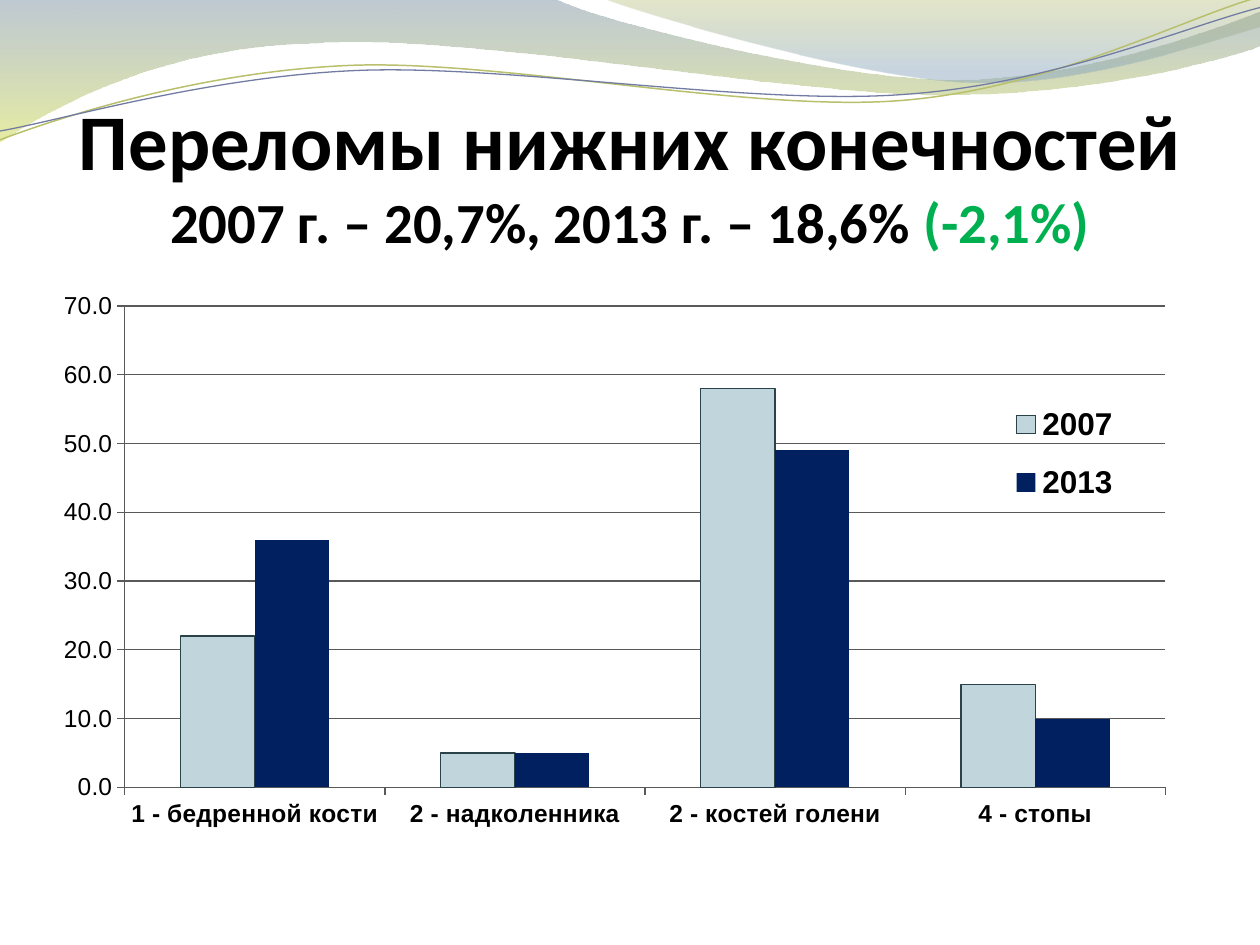
from lxml.etree import SubElement
from pptx import Presentation
from pptx.chart.data import CategoryChartData
from pptx.dml.color import RGBColor
from pptx.enum.chart import XL_CHART_TYPE as ChartType, XL_LEGEND_POSITION as LegendPosition, XL_TICK_MARK as TickMark
from pptx.enum.text import MSO_ANCHOR as Anchor, MSO_AUTO_SIZE as AutoSize, PP_ALIGN as Align
from pptx.oxml import parse_xml
from pptx.oxml.ns import nsdecls, qn
from pptx.util import Inches, Pt

CHART_WIDTH, CHART_HEIGHT = 9.21, 4.65


def color(value):
    return RGBColor.from_string(value)


def manual_layout(left, top, width, height, inner=False):
    layout = parse_xml(f"<c:layout {nsdecls('c')}><c:manualLayout/></c:layout>")
    settings = [("layoutTarget", "inner")] if inner else []
    settings += [("xMode", "edge"), ("yMode", "edge"),
                 ("x", left / CHART_WIDTH), ("y", top / CHART_HEIGHT),
                 ("w", width / CHART_WIDTH), ("h", height / CHART_HEIGHT)]
    for name, value in settings:
        SubElement(layout[0], qn(f"c:{name}")).set("val", str(value))
    return layout


deck = Presentation()
deck.slide_width, deck.slide_height = Inches(10), Inches(7.5)
slide = deck.slides.add_slide(deck.slide_layouts[5])

waves = [
    ((0, 0),
     [[(4.4, -0.01)],
      [(4.76, 0.17), (6.64, 0.63), (7.58, 0.63)],
      [(8.53, 0.63), (9.58, 0.26), (10, 0.09)],
      [(10.01, 0.36)],
      [(9.83, 0.44), (8.7, 0.76), (7.46, 0.75)],
      [(6.22, 0.75), (3.82, 0.28), (2.57, 0.34)],
      [(1.29, 0.36), (0.46, 0.83), (-0.01, 1.13)]],
     [(0, "72889B", 45), (1, "D3DE57", 55)], None),
    ((4.79, -0.01),
     [[(5.09, 0.11), (6.82, 0.62), (7.69, 0.65)],
      [(8.56, 0.69), (9.61, 0.32), (10, 0.21)],
      [(10, 0)]],
     [(0, "A4AC50", 30), (0.8, "84A3BD", 45)], None),
    ((0, 1.11),
     [[(0.48, 0.93), (1.58, 0.57), (2.77, 0.52)],
      [(3.95, 0.47), (5.93, 0.89), (7.13, 0.8)],
      [(8.33, 0.71), (9.38, 0.15), (9.98, -0.02)]],
     None, ("B9C06C", 0.85)),
    ((0, 1.04),
     [[(0.47, 0.96), (1.64, 0.61), (2.83, 0.56)],
      [(4.03, 0.51), (5.97, 0.84), (7.17, 0.75)],
      [(8.36, 0.67), (9.41, 0.21), (10, 0.06)]],
     None, ("727CA3", 0.75)),
]
for start, steps, gradient, outline in waves:
    builder = slide.shapes.build_freeform(Inches(start[0]), Inches(start[1]))
    builder.add_line_segments([(Inches(x), Inches(y)) for step in steps for x, y in step],
                              close=gradient is not None)
    wave = builder.convert_to_shape()
    wave.shadow.inherit = False
    segments = iter(list(wave._element.spPr.iter(qn("a:lnTo"))))
    for step in steps:
        step_segments = [next(segments) for point in step]
        if len(step) == 3:
            curve = parse_xml(f"<a:cubicBezTo {nsdecls('a')}/>")
            step_segments[0].addprevious(curve)
            for segment in step_segments:
                curve.append(segment[0])
                segment.getparent().remove(segment)
    if gradient:
        wave.line.fill.background()
        wave.fill.gradient()
        wave.fill.gradient_angle = 270
        for stop, (position, value, opacity) in zip(wave.fill.gradient_stops, gradient):
            stop.position = position
            stop.color.rgb = color(value)
        for element, (position, value, opacity) in zip(wave._element.spPr.iter(qn("a:srgbClr")), gradient):
            SubElement(element, qn("a:alpha")).set("val", str(opacity * 1000))
    else:
        wave.fill.background()
        wave.line.color.rgb = color(outline[0])
        wave.line.width = Pt(outline[1])

title = slide.shapes.title
slide.shapes._spTree.append(title._element)
title.left, title.top, title.width, title.height = Inches(0.5), Inches(0.77), Inches(9), Inches(1.25)
frame = title.text_frame
frame.word_wrap = True
frame.auto_size = AutoSize.NONE
frame.vertical_anchor = Anchor.BOTTOM
frame.margin_left = frame.margin_right = frame.margin_bottom = 0
frame.margin_top = Inches(0.05)
para = frame.paragraphs[0]
para.alignment = Align.CENTER
para.font.name = "Calibri"
para.font.bold = True
for text, size, value in [("Переломы нижних конечностей", 45, "000000"),
                          ("2007 г. – 20,7%, 2013 г. – 18,6% ", 32.4, "000000"),
                          ("(-2,1%)", 32.4, "00B050")]:
    span = para.add_run()
    span.text = text
    span.font.size = Pt(size)
    span.font.color.rgb = color(value)
    if size == 45:
        para.add_line_break()

fractures = CategoryChartData(number_format="0.0")
fractures.categories = ["1 - бедренной кости", "2 - надколенника", "2 - костей голени", "4 - стопы"]
fractures.add_series("2007", (22, 5, 58, 15))
fractures.add_series("2013", (36, 5, 49, 10))
chart = slide.shapes.add_chart(ChartType.COLUMN_CLUSTERED, Inches(0.35), Inches(2.25),
                               Inches(CHART_WIDTH), Inches(CHART_HEIGHT), fractures).chart
chart.has_title = False
chart.font.name = "Vollkorn"
chart.font.size = Pt(10)
chart.font.color.rgb = color("000000")

plot = chart.plots[0]
plot.gap_width = 150
plot.overlap = 0
plot.vary_by_categories = False
for series, value in zip(plot.series, ["C0D6DC", "002060"]):
    series.format.fill.solid()
    series.format.fill.fore_color.rgb = color(value)
    series.format.line.fill.background()
light_outline = plot.series[0].format.line
light_outline.color.rgb = color("294349")
light_outline.width = Pt(0.75)

value_axis, category_axis = chart.value_axis, chart.category_axis
value_axis.minimum_scale, value_axis.maximum_scale, value_axis.major_unit = 0, 70, 10
value_axis.has_major_gridlines = True
value_axis.tick_labels.number_format = "0.0"
value_axis.tick_labels.number_format_is_linked = False
for axis, bold in [(value_axis, False), (category_axis, True)]:
    axis.major_tick_mark = TickMark.OUTSIDE
    axis.minor_tick_mark = TickMark.NONE
    axis.tick_labels.font.name = "Arial"
    axis.tick_labels.font.size = Pt(14)
    axis.tick_labels.font.bold = bold
for line in (value_axis.format.line, category_axis.format.line, value_axis.major_gridlines.format.line):
    line.color.rgb = color("595959")
    line.width = Pt(0.75)

chart.has_legend = True
legend = chart.legend
legend.position = LegendPosition.RIGHT
legend.include_in_layout = False
legend.font.name = "Arial"
legend.font.size = Pt(18)
legend.font.bold = True

plot_area = chart._chartSpace.chart.plotArea
for parent in (plot_area, legend._element):
    for old_layout in parent.findall(qn("c:layout")):
        parent.remove(old_layout)
plot_area.insert(0, manual_layout(0.64, 0.18, 8.26, 3.82, inner=True))
legend._element.find(qn("c:overlay")).addprevious(manual_layout(7.5, 0.8, 1.2, 1.1))

deck.save("out.pptx")
